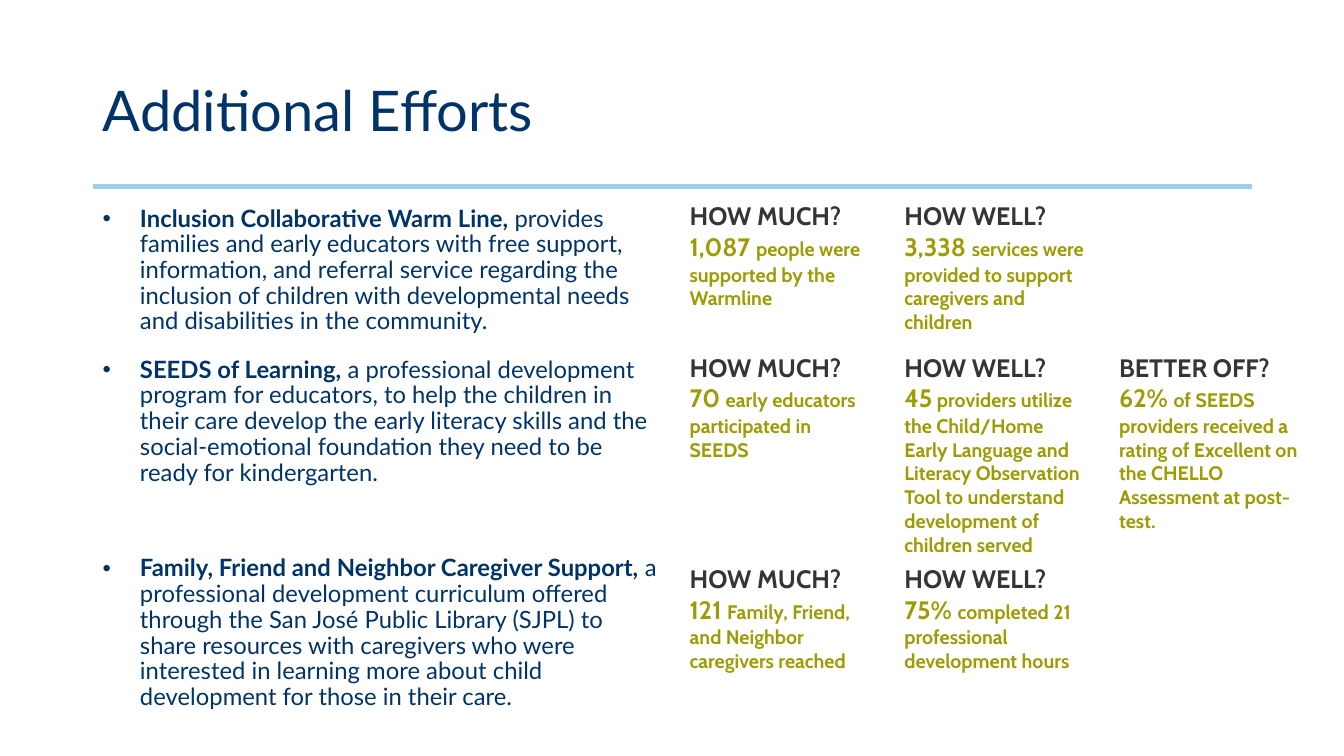
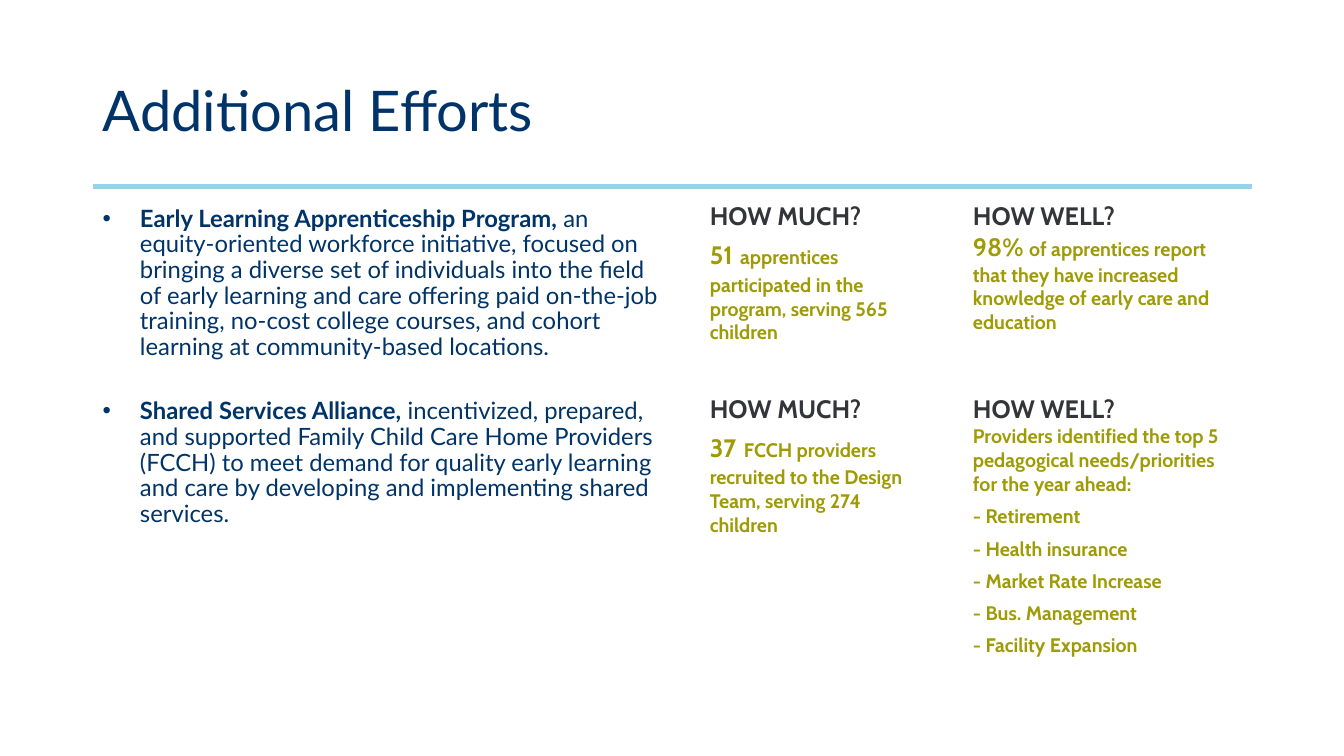
"""Build two slides on additional early learning efforts."""
from dataclasses import dataclass

import lxml.etree
import pptx
import pptx.dml.color
import pptx.enum.shapes
import pptx.enum.text
import pptx.oxml
import pptx.oxml.ns
import pptx.presentation
import pptx.slide
import pptx.text.text
import pptx.util

Inches = pptx.util.Inches
Pt = pptx.util.Pt
qn = pptx.oxml.ns.qn

NAVY, SKY, DARK, OLIVE, WHITE = "003468", "9AD1EA", "333539", "9F9B04", "FFFFFF"
BODY, ACCENT = "Lato", "Cabin"
LEFT, WIDTH, RULE = 0.92, 11.5, 1.85
HEADS = ("HOW MUCH?", "HOW WELL?", "BETTER OFF?")


@dataclass
class Card:
    """Hold one measured result."""
    height: float
    stat: str
    note: str
    gap: int = 18
    items: tuple[str, ...] = ()


@dataclass
class Effort:
    """Hold one program and its results."""
    top: float
    height: float
    name: str
    about: str
    cards: tuple[Card, ...]
    shift: float = 0


@dataclass
class Page:
    """Hold one slide: result columns as left and width, and its efforts."""
    columns: tuple[tuple[float, float], ...]
    efforts: tuple[Effort, ...]


PAGES = (
    Page(
        tuple((6.77 + 2.13 * i, 1.94) for i in range(3)),
        (
            Effort(
                2, 1.5, "Inclusion Collaborative Warm Line,",
                "provides families and early educators with free support, information, "
                "and referral service regarding the inclusion of children with "
                "developmental needs and disabilities in the community.",
                (
                    Card(1.45, "1,087", "people were supported by the Warmline"),
                    Card(1.45, "3,338",
                         "services were provided to support caregivers and children"),
                ),
            ),
            Effort(
                3.5, 1.5, "SEEDS of Learning,",
                "a professional development program for educators, to help the children "
                "in their care develop the early literacy skills and the "
                "social-emotional foundation they need to be ready for kindergarten.",
                (
                    Card(1.22, "70", "early educators participated in SEEDS"),
                    Card(2, "45",
                         "providers utilize the Child/Home Early Language and Literacy "
                         "Observation Tool to understand development of children served",
                         14),
                    Card(2.15, "62%",
                         "of SEEDS providers received a rating of Excellent on the "
                         "CHELLO Assessment at post-test."),
                ),
            ),
            Effort(
                5.47, 1.65, "Family, Friend and Neighbor Caregiver Support,",
                "a professional development curriculum offered through the San José "
                "Public Library (SJPL) to share resources with caregivers who were "
                "interested in learning more about child development for those in "
                "their care.",
                (
                    Card(1.45, "121", "Family, Friend, and Neighbor caregivers reached"),
                    Card(1.45, "75%", "completed 21 professional development hours"),
                ),
                0.13,
            ),
        ),
    ),
    Page(
        ((6.97, 2.3), (9.58, 2.76)),
        (
            Effort(
                2, 1.75, "Early Learning Apprenticeship Program,",
                "an equity-oriented workforce initiative, focused on bringing a diverse "
                "set of individuals into the field of early learning and care offering "
                "paid on-the-job training, no-cost college courses, and cohort learning "
                "at community-based locations.",
                (
                    Card(1.4, "51",
                         "apprentices participated in the program, serving 565 children",
                         24),
                    Card(1.4, "98%",
                         "of apprentices report that they have increased knowledge of "
                         "early care and education"),
                ),
            ),
            Effort(
                3.91, 1.5, "Shared Services Alliance,",
                "incentivized, prepared, and supported Family Child Care Home Providers "
                "(FCCH) to meet demand for quality early learning and care by developing "
                "and implementing shared services.",
                (
                    Card(1.78, "37",
                         "FCCH providers recruited to the Design Team, serving 274 "
                         "children", 24),
                    Card(2.8, "",
                         "Providers identified the top 5 pedagogical needs/priorities "
                         "for the year ahead:",
                         items=("- Retirement", "- Health insurance",
                                "- Market Rate Increase", "- Bus. Management",
                                "- Facility Expansion")),
                ),
            ),
        ),
    ),
)


def color(code: str) -> pptx.dml.color.RGBColor:
    """Turn a hex string into a colour."""
    return pptx.dml.color.RGBColor.from_string(code)


def write(para: pptx.text.text._Paragraph, text: str, size: float, face: str,
          code: str, bold: bool = False) -> None:
    """Append a formatted run."""
    run = para.add_run()
    run.text = text
    run.font.size = Pt(size)
    run.font.name = face
    run.font.bold = bold
    run.font.color.rgb = color(code)


def draw_head(slide: pptx.slide.Slide) -> None:
    """Format the title and draw the rule below it."""
    title = slide.shapes.title
    title.left, title.top = Inches(LEFT), Inches(0.4)
    title.width, title.height = Inches(WIDTH), Inches(RULE - 0.4)
    frame = title.text_frame
    frame.auto_size = pptx.enum.text.MSO_AUTO_SIZE.NONE
    frame.vertical_anchor = pptx.enum.text.MSO_ANCHOR.MIDDLE
    para = frame.paragraphs[0]
    para.alignment = pptx.enum.text.PP_ALIGN.LEFT
    para.line_spacing = 0.9
    write(para, "Additional Efforts", 40, BODY, NAVY)
    rule = slide.shapes.add_connector(
        pptx.enum.shapes.MSO_CONNECTOR.STRAIGHT,
        Inches(LEFT), Inches(RULE), Inches(LEFT + WIDTH), Inches(RULE))
    rule.line.color.rgb = color(SKY)
    rule.line.width = Pt(3)
    props = rule.element.find(qn("p:spPr"))
    lxml.etree.SubElement(props, qn("a:effectLst"))


def draw_text(slide: pptx.slide.Slide, effort: Effort) -> None:
    """Draw the bulleted text of an effort."""
    box = slide.shapes.add_textbox(
        Inches(LEFT), Inches(effort.top), Inches(5.73), Inches(effort.height))
    frame = box.text_frame
    frame.word_wrap = True
    para = frame.paragraphs[0]
    props = para._p.get_or_add_pPr()
    props.set("marL", str(Inches(0.37)))
    props.set("indent", str(-Inches(0.37)))
    lxml.etree.SubElement(props, qn("a:buFont"), typeface="Arial")
    lxml.etree.SubElement(props, qn("a:buChar"), char="•")
    para.line_spacing = 0.9
    write(para, effort.name, 17, BODY, NAVY, True)
    write(para, " " + effort.about, 17, BODY, NAVY)


def draw_card(slide: pptx.slide.Slide, card: Card, head: str,
              left: float, top: float, width: float) -> None:
    """Draw one result as a table of one cell."""
    table = slide.shapes.add_table(
        1, 1, Inches(left), Inches(top), Inches(width), Inches(card.height)).table
    table.first_row = table.horz_banding = False
    cell = table.cell(0, 0)
    cell.margin_left = cell.margin_right = Inches(0.07)
    cell.margin_top = cell.margin_bottom = 0
    cell.fill.solid()
    cell.fill.fore_color.rgb = color(WHITE)
    props = cell._tc.get_or_add_tcPr()
    for spot, side in enumerate(("lnL", "lnT", "lnB")):
        edge = pptx.oxml.parse_xml(
            f'<a:{side} {pptx.oxml.ns.nsdecls("a")} w="{Pt(3)}"><a:solidFill>'
            f'<a:srgbClr val="{WHITE}"/></a:solidFill></a:{side}>')
        props.insert(spot, edge)
    frame = cell.text_frame
    write(frame.paragraphs[0], head, 18, ACCENT, DARK, True)
    para = frame.add_paragraph()
    para.space_after = Pt(6)
    if card.stat:
        write(para, card.stat, 18, ACCENT, OLIVE, True)
        write(para, " ", card.gap, ACCENT, OLIVE, True)
    write(para, card.note, 14, ACCENT, OLIVE, True)
    for item in card.items:
        para = frame.add_paragraph()
        para.space_after = Pt(6)
        write(para, item, 14, ACCENT, OLIVE, True)


def draw_page(deck: pptx.presentation.Presentation, page: Page) -> None:
    """Add one slide with its efforts."""
    slide = deck.slides.add_slide(deck.slide_layouts[5])
    draw_head(slide)
    for effort in page.efforts:
        for card, head, (left, width) in zip(effort.cards, HEADS, page.columns):
            draw_card(slide, card, head, left, effort.top + effort.shift, width)
        draw_text(slide, effort)


def main() -> None:
    """Build and save the deck."""
    deck = pptx.Presentation()
    deck.slide_width, deck.slide_height = Inches(13.33), Inches(7.5)
    for page in PAGES:
        draw_page(deck, page)
    deck.save("out.pptx")


if __name__ == "__main__":
    main()
